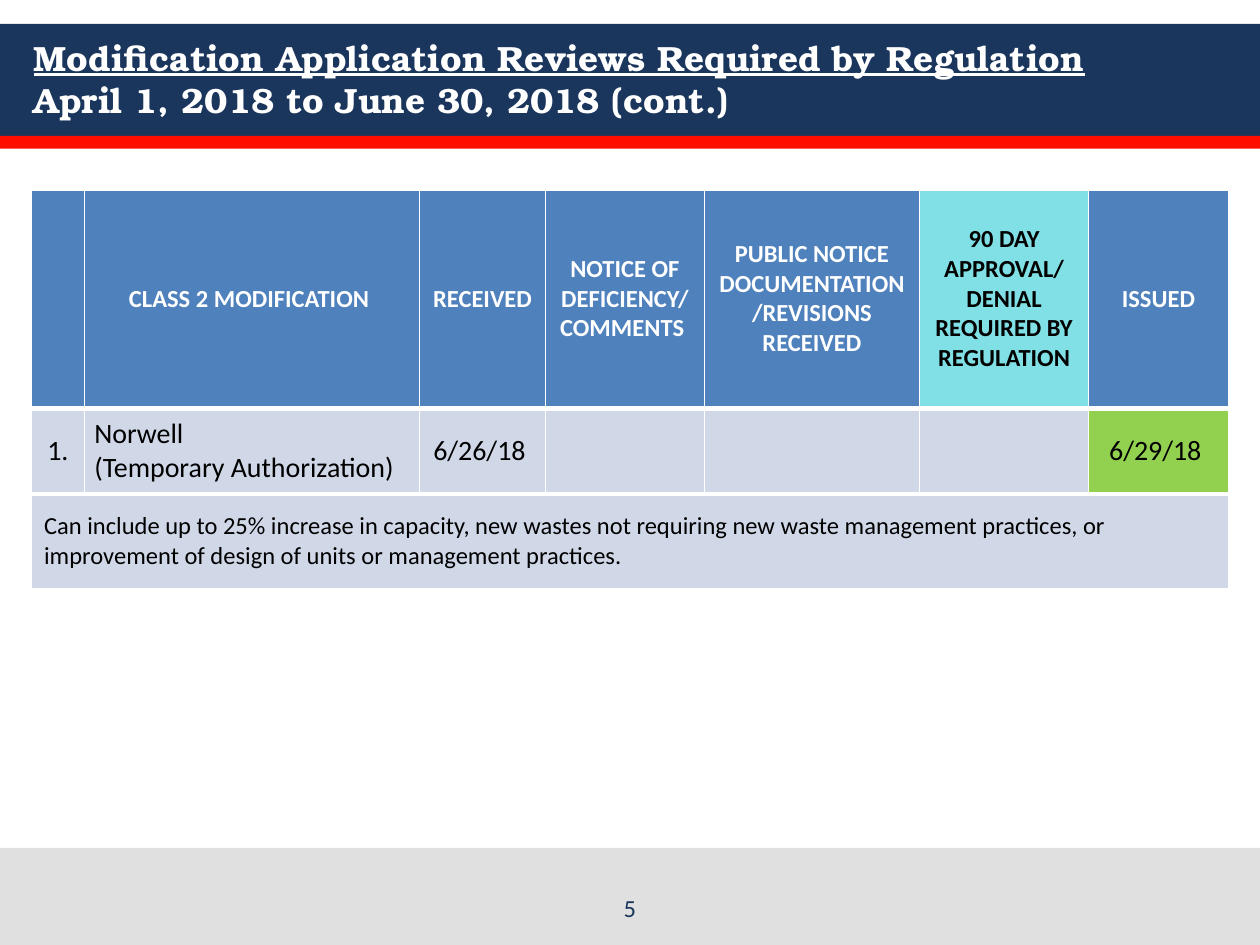
"""Build a slide listing Class 2 modification reviews in a table."""
from dataclasses import dataclass
from typing import Optional

from lxml.etree import SubElement
from pptx import Presentation
from pptx.dml.color import RGBColor as Color
from pptx.enum.shapes import MSO_SHAPE as Preset
from pptx.enum.text import MSO_ANCHOR as Anchor, MSO_AUTO_SIZE as AutoSize, PP_ALIGN as Align
from pptx.oxml.ns import qn
from pptx.util import Pt


@dataclass(frozen=True)
class Theme:
    navy: str = "1B365D"
    red: str = "FF0F00"
    gray: str = "E0E0E0"
    blue: str = "4F81BD"
    aqua: str = "81E0E5"
    pale: str = "D0D8E8"
    green: str = "92D050"
    white: str = "FFFFFF"
    black: str = "000000"
    title_font: str = "TeX Gyre Bonum"
    body_font: str = "Calibri"
    title_size: float = 20
    entry_size: float = 16
    small_size: float = 14


THEME = Theme()


@dataclass(frozen=True)
class Band:
    top: float
    height: float
    color: str


@dataclass(frozen=True)
class CellSpec:
    text: str = ""
    fill: str = THEME.pale
    color: str = THEME.black
    size: float = THEME.entry_size
    bold: bool = False
    align: Align = Align.CENTER
    inset_x: float = 5.76
    inset_y: float = 0
    bottom_line: float = 3


def header(text: str, fill: str = THEME.blue, color: str = THEME.white) -> CellSpec:
    return CellSpec(text, fill, color, THEME.small_size, bold=True)


BANDS = [
    Band(13.7, 64, THEME.navy),
    Band(77.7, 7.3, THEME.red),
    Band(484.5, 55.5, THEME.gray),
]
COLUMN_WIDTHS = [30.2, 191.6, 72, 90.7, 123.1, 96.5, 79.9]
ROW_HEIGHTS = [125.3, 49, 54]
ROWS = [
    [
        header(""),
        header("CLASS 2 MODIFICATION "),
        header("RECEIVED"),
        header("NOTICE OF DEFICIENCY/ COMMENTS "),
        header("PUBLIC NOTICE DOCUMENTATION/REVISIONS RECEIVED"),
        header("90 DAY APPROVAL/ DENIAL\nREQUIRED BY REGULATION", THEME.aqua, THEME.black),
        header("ISSUED"),
    ],
    [
        CellSpec("1."),
        CellSpec("Norwell\n(Temporary Authorization)", align=Align.LEFT),
        CellSpec("6/26/18 "),
        CellSpec(),
        CellSpec(),
        CellSpec(),
        CellSpec("6/29/18 ", THEME.green),
    ],
    [
        CellSpec(
            "Can include up to 25% increase in capacity, new wastes not requiring "
            "new waste management practices, or\n"
            "improvement of design of units or management practices.",
            size=THEME.small_size, align=Align.LEFT,
            inset_x=7.2, inset_y=3.6, bottom_line=1,
        ),
    ],
]


def style_font(font, name: str, size: float, color: str, bold: bool = False) -> None:
    font.name = name
    font.size = Pt(size)
    font.bold = bold
    font.color.rgb = Color.from_string(color)


def draw_band(page, band: Band, width: int) -> None:
    shape = page.shapes.add_shape(Preset.RECTANGLE, 0, Pt(band.top), width, Pt(band.height))
    shape.shadow.inherit = False
    shape.fill.solid()
    shape.fill.fore_color.rgb = Color.from_string(band.color)
    shape.line.fill.background()


def draw_title(page) -> None:
    title = page.shapes.title
    title.element.getparent().append(title.element)
    title.left, title.top, title.width, title.height = Pt(12.2), Pt(12.2), Pt(696), Pt(65)
    frame = title.text_frame
    frame.auto_size = AutoSize.NONE
    frame.vertical_anchor = Anchor.MIDDLE
    para = frame.paragraphs[0]
    para.text = (
        "Modification Application Reviews Required by Regulation\n"
        "April 1, 2018 to June 30, 2018 (cont.)"
    )
    para.alignment = Align.LEFT
    for index, span in enumerate(para.runs):
        style_font(span.font, THEME.title_font, THEME.title_size, THEME.white, bold=True)
        span.font.underline = index == 0


def set_borders(cell, bottom: float) -> None:
    properties = cell._tc.get_or_add_tcPr()
    for side, width in (("L", 1), ("R", 1), ("T", 3), ("B", bottom)):
        line = SubElement(properties, qn(f"a:ln{side}"), w=str(Pt(width)))
        fill = SubElement(line, qn("a:solidFill"))
        SubElement(fill, qn("a:srgbClr"), val=THEME.white)


def fill_cell(cell, spec: CellSpec) -> None:
    set_borders(cell, spec.bottom_line)
    cell.fill.solid()
    cell.fill.fore_color.rgb = Color.from_string(spec.fill)
    cell.vertical_anchor = Anchor.MIDDLE
    cell.margin_left = cell.margin_right = Pt(spec.inset_x)
    cell.margin_top = cell.margin_bottom = Pt(spec.inset_y)
    cell.text_frame.text = spec.text
    for para in cell.text_frame.paragraphs:
        para.alignment = spec.align
        for span in para.runs:
            style_font(span.font, THEME.body_font, spec.size, spec.color, spec.bold)


def draw_table(page) -> None:
    table = page.shapes.add_table(
        len(ROW_HEIGHTS), len(COLUMN_WIDTHS), Pt(18), Pt(108),
        Pt(sum(COLUMN_WIDTHS)), Pt(sum(ROW_HEIGHTS)),
    ).table
    table.first_row = table.horz_banding = False
    for column, width in zip(table.columns, COLUMN_WIDTHS):
        column.width = Pt(width)
    for row, height in zip(table.rows, ROW_HEIGHTS):
        row.height = Pt(height)
    last_row, last_column = len(ROW_HEIGHTS) - 1, len(COLUMN_WIDTHS) - 1
    table.cell(last_row, 0).merge(table.cell(last_row, last_column))
    for row_index, specs in enumerate(ROWS):
        for column_index, spec in enumerate(specs):
            fill_cell(table.cell(row_index, column_index), spec)


def draw_page_number(page, number: str) -> None:
    box = page.shapes.add_textbox(Pt(246), Pt(502), Pt(228), Pt(28.8))
    frame = box.text_frame
    frame.word_wrap = True
    frame.vertical_anchor = Anchor.BOTTOM
    frame.text = number
    para = frame.paragraphs[0]
    para.alignment = Align.CENTER
    style_font(para.runs[0].font, THEME.body_font, THEME.small_size, THEME.navy)


def main() -> None:
    deck = Presentation()
    deck.slide_width, deck.slide_height = Pt(720), Pt(540)
    page = deck.slides.add_slide(deck.slide_layouts[5])
    for band in BANDS:
        draw_band(page, band, deck.slide_width)
    draw_title(page)
    draw_table(page)
    draw_page_number(page, "5")
    deck.save("out.pptx")


if __name__ == "__main__":
    main()
